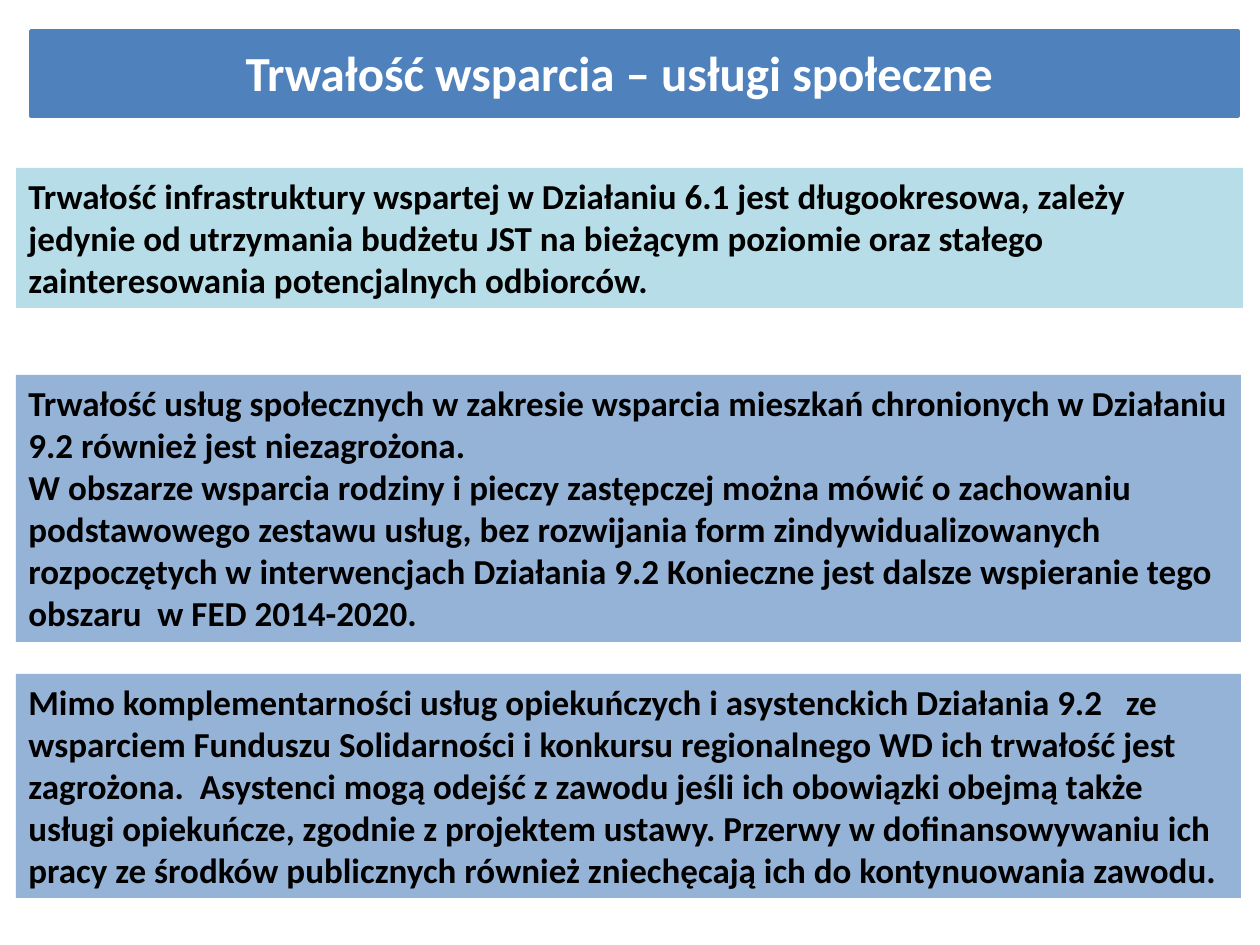
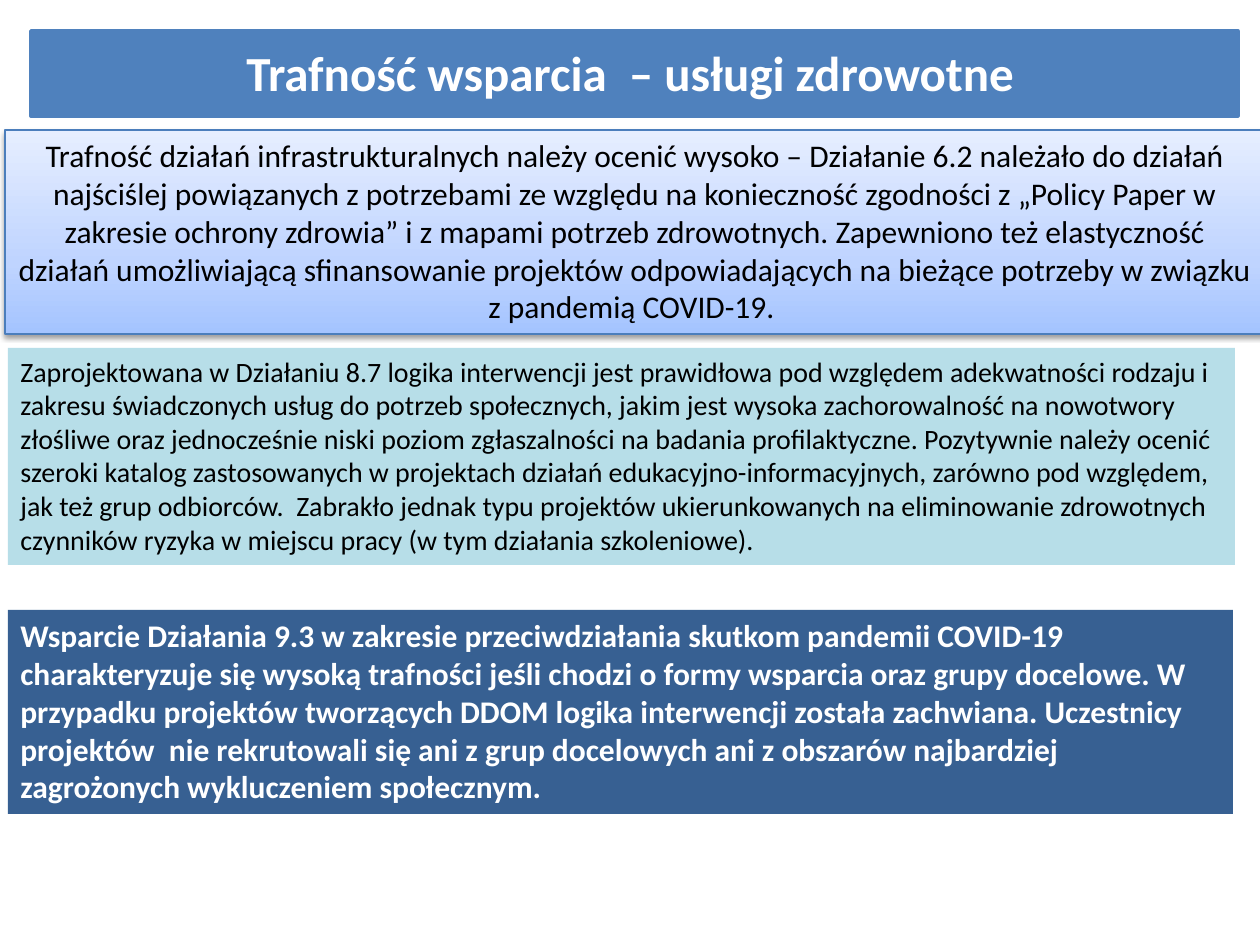
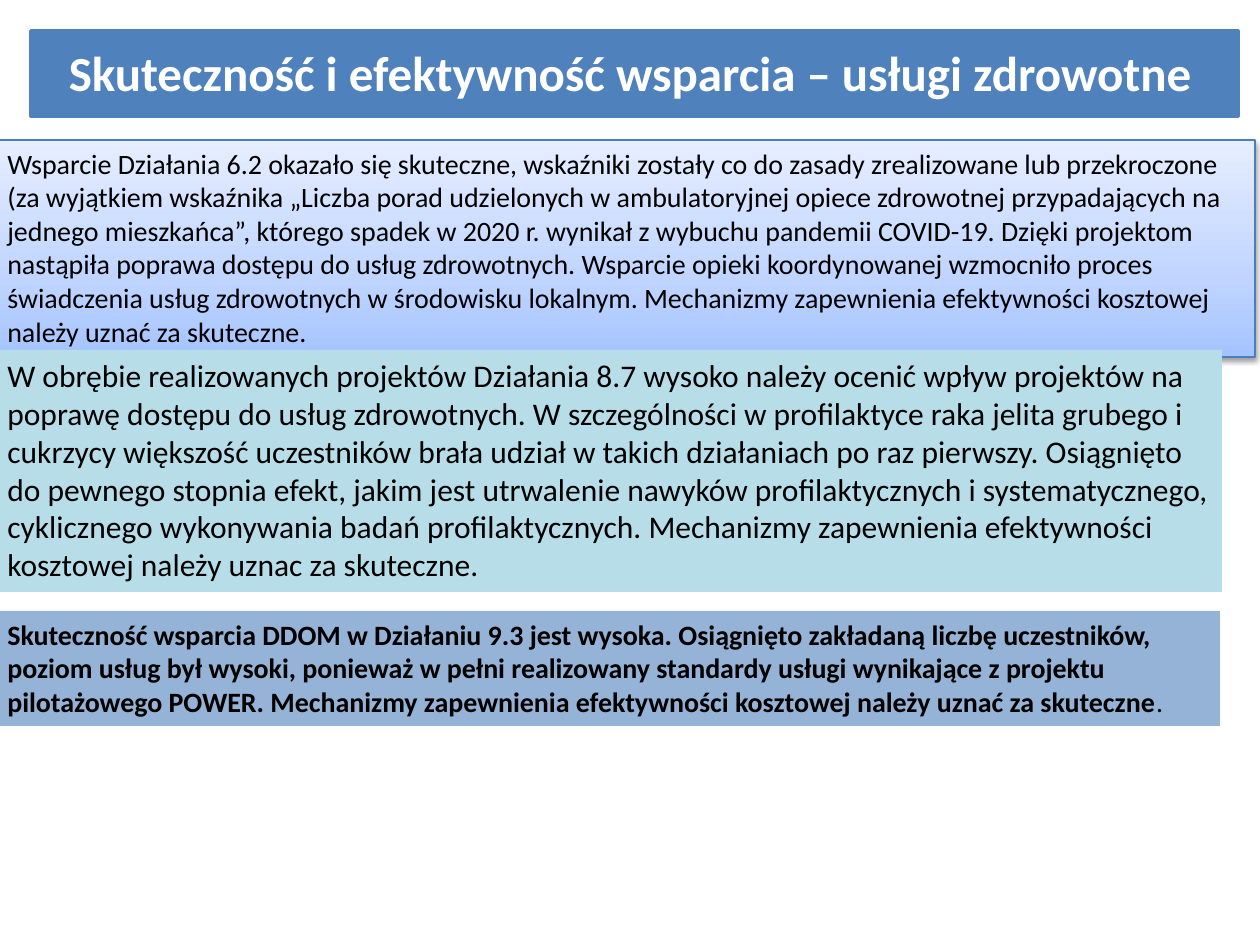
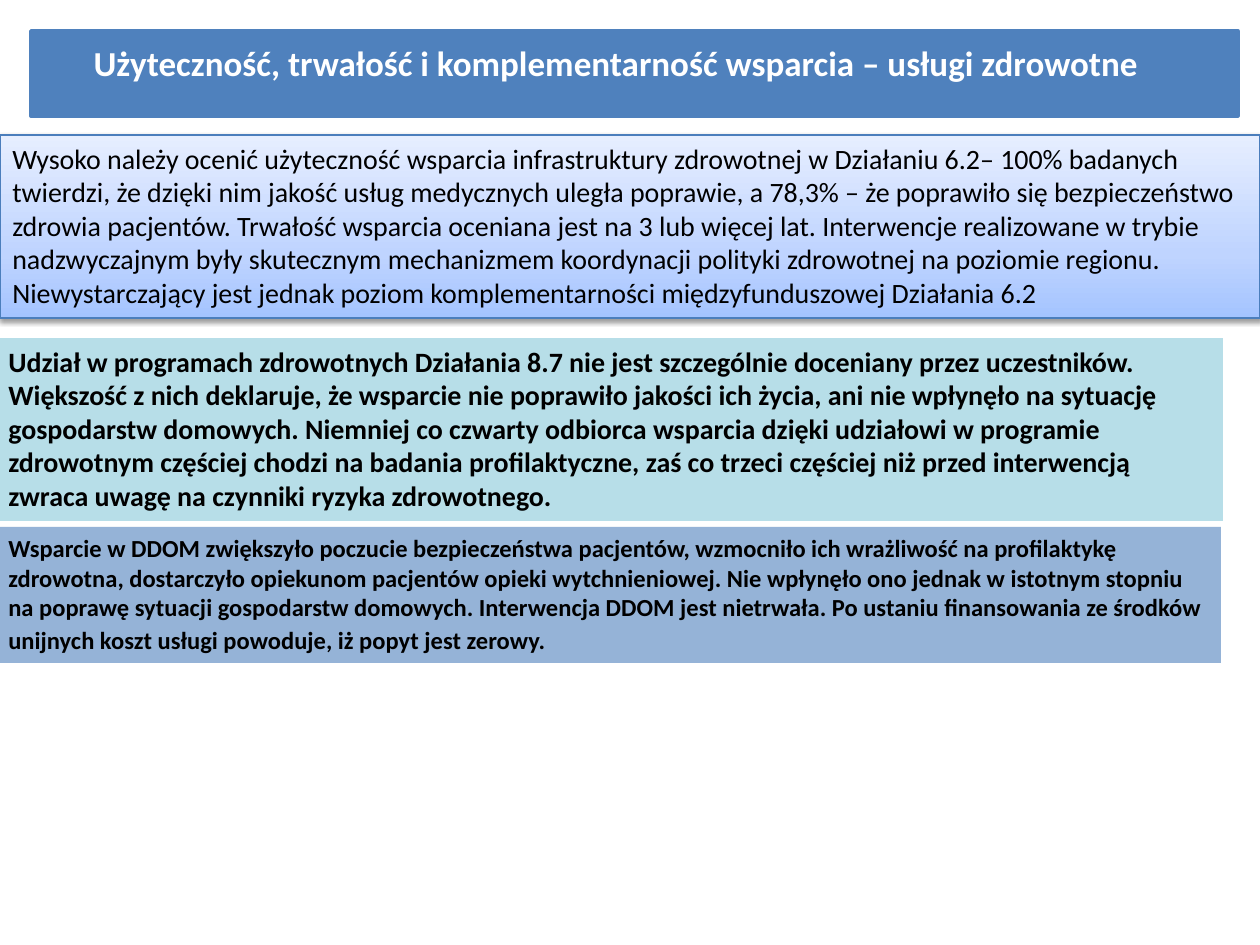
from collections import namedtuple

from lxml import etree
from pptx import Presentation
from pptx.dml.color import RGBColor
from pptx.enum.shapes import MSO_SHAPE
from pptx.enum.text import MSO_ANCHOR, MSO_AUTO_SIZE, PP_ALIGN
from pptx.oxml.ns import qn
from pptx.util import Emu, Pt

EMU_PER_PX = 914400 / 126
PAGE_WIDTH, PAGE_HEIGHT = 1260, 945
FONT = "Calibri"

RECTANGLE = MSO_SHAPE.RECTANGLE
TOP, MIDDLE = MSO_ANCHOR.TOP, MSO_ANCHOR.MIDDLE
LEFT, CENTER = PP_ALIGN.LEFT, PP_ALIGN.CENTER
GROW = MSO_AUTO_SIZE.SHAPE_TO_FIT_TEXT

BLACK = RGBColor(0x00, 0x00, 0x00)
WHITE = RGBColor(0xFF, 0xFF, 0xFF)
BAND_BLUE = RGBColor(0x4F, 0x81, 0xBD)
TEAL = RGBColor(0xB7, 0xDE, 0xE8)
LIGHT_BLUE = RGBColor(0x95, 0xB3, 0xD7)
DARK_BLUE = RGBColor(0x37, 0x60, 0x92)
OUTLINE_BLUE = RGBColor(0x4B, 0x7E, 0xBC)
GRADIENT_STOPS = (
    (0, RGBColor(0xA4, 0xC4, 0xFF)),
    (35, RGBColor(0xBF, 0xD4, 0xFF)),
    (100, RGBColor(0xE6, 0xEE, 0xFF)),
)

# A panel kind: its width, its fill (None means the gradient) and text colour
Kind = namedtuple("Kind", "width fill text_color")
INFRASTRUCTURE = Kind(PAGE_WIDTH, None, BLACK)
TEAL_PANEL = Kind(1227, TEAL, BLACK)
BLUE_PANEL = Kind(1225, LIGHT_BLUE, BLACK)
DARK_PANEL = Kind(1225, DARK_BLUE, WHITE)


def px(length):
    return Emu(round(length * EMU_PER_PX))


def add_rectangle(page, left, top, width, height):
    box = page.shapes.add_shape(RECTANGLE, px(left), px(top), px(width), px(height))
    box.shadow.inherit = False
    return box


def add_span(para, text, size, color, bold):
    span = para.add_run()
    span.text = text
    span.font.name = FONT
    span.font.size = Pt(size)
    span.font.color.rgb = color
    span.font.bold = bold


def write_text(box, *texts, size, color=BLACK, bold=False, align=LEFT, anchor=TOP):
    """Write one paragraph per text and return the last paragraph."""
    frame = box.text_frame
    frame.word_wrap = True
    frame.vertical_anchor = anchor
    for index, text in enumerate(texts):
        para = frame.add_paragraph() if index else frame.paragraphs[0]
        para.alignment = align
        add_span(para, text, size, color, bold)
    return para


def add_color(parent, color):
    return etree.SubElement(parent, qn("a:srgbClr"), val=str(color))


def fill_gradient(box):
    box.fill.gradient()
    box.fill.gradient_angle = 90
    stop_list = box.fill._xPr.find(".//" + qn("a:gsLst"))
    for stop in list(stop_list):
        stop_list.remove(stop)
    for percent, color in GRADIENT_STOPS:
        stop = etree.SubElement(stop_list, qn("a:gs"), pos=str(percent * 1000))
        add_color(stop, color)


def add_shadow(box):
    effects = box.element.spPr.find(qn("a:effectLst"))
    shadow = etree.SubElement(effects, qn("a:outerShdw"), blurRad="40000",
                              dist="20000", dir="5400000", rotWithShape="0")
    etree.SubElement(add_color(shadow, BLACK), qn("a:alpha"), val="38000")


def add_panel(page, kind, left, top, height, *texts, size, bold=False, align=LEFT):
    box = add_rectangle(page, left, top, kind.width, height)
    if kind.fill is None:
        fill_gradient(box)
        box.line.color.rgb = OUTLINE_BLUE
        box.line.width = Pt(0.75)
        add_shadow(box)
    else:
        box.fill.solid()
        box.fill.fore_color.rgb = kind.fill
        box.line.fill.background()
    box.text_frame.auto_size = GROW
    return write_text(box, *texts, size=size, color=kind.text_color, bold=bold, align=align)


def add_page(deck, title, left=0, top=38, width=PAGE_WIDTH, height=67, size=28):
    """Add a page with the title band shared by all pages."""
    page = deck.slides.add_slide(deck.slide_layouts[6])
    band = add_rectangle(page, 31, 31, 1207, 85)
    band.fill.solid()
    band.fill.fore_color.rgb = BAND_BLUE
    band.line.color.rgb = BAND_BLUE
    band.line.width = Pt(2)
    box = page.shapes.add_textbox(px(left), px(top), px(width), px(height))
    write_text(box, title, size=size, color=WHITE, bold=True, align=CENTER, anchor=MIDDLE)
    return page, box


def build_social_durability(deck):
    page, title_box = add_page(deck, "Trwałość wsparcia – usługi społeczne")
    title_box.text_frame.margin_right = px(34)
    add_panel(
        page, TEAL_PANEL, 16, 168, 140,
        "Trwałość infrastruktury wspartej w Działaniu 6.1 jest długookresowa, zależy "
        "jedynie od utrzymania budżetu JST na bieżącym poziomie oraz stałego "
        "zainteresowania potencjalnych odbiorców.",
        size=20, bold=True)
    add_panel(
        page, BLUE_PANEL, 16, 375, 267,
        "Trwałość usług społecznych w zakresie wsparcia mieszkań chronionych w Działaniu "
        "9.2 również jest niezagrożona.",
        "W obszarze wsparcia rodziny i pieczy zastępczej można mówić o zachowaniu "
        "podstawowego zestawu usług, bez rozwijania form zindywidualizowanych "
        "rozpoczętych w interwencjach Działania 9.2 Konieczne jest dalsze wspieranie tego "
        "obszaru  w FED 2014-2020.",
        size=20, bold=True)
    add_panel(
        page, BLUE_PANEL, 16, 674, 224,
        "Mimo komplementarności usług opiekuńczych i asystenckich Działania 9.2   ze "
        "wsparciem Funduszu Solidarności i konkursu regionalnego WD ich trwałość jest "
        "zagrożona.  Asystenci mogą odejść z zawodu jeśli ich obowiązki obejmą także "
        "usługi opiekuńcze, zgodnie z projektem ustawy. Przerwy w dofinansowywaniu ich "
        "pracy ze środków publicznych również zniechęcają ich do kontynuowania zawodu.",
        size=20, bold=True)


def build_health_relevance(deck):
    page, _ = add_page(deck, "Trafność wsparcia  – usługi zdrowotne", left=63, width=1134)
    add_panel(
        page, INFRASTRUCTURE, 5, 130, 204,
        "Trafność działań infrastrukturalnych należy ocenić wysoko – Działanie 6.2 "
        "należało do działań najściślej powiązanych z potrzebami ze względu na "
        "konieczność zgodności z „Policy Paper w zakresie ochrony zdrowia” i z mapami "
        "potrzeb zdrowotnych. Zapewniono też elastyczność działań umożliwiającą "
        "sfinansowanie projektów odpowiadających na bieżące potrzeby w związku z pandemią "
        "COVID-19. ",
        size=18, align=CENTER)
    add_panel(
        page, TEAL_PANEL, 8, 348, 217,
        "Zaprojektowana w Działaniu 8.7 logika interwencji jest prawidłowa pod względem "
        "adekwatności rodzaju i zakresu świadczonych usług do potrzeb społecznych, jakim "
        "jest wysoka zachorowalność na nowotwory złośliwe oraz jednocześnie niski poziom "
        "zgłaszalności na badania profilaktyczne. Pozytywnie należy ocenić szeroki "
        "katalog zastosowanych w projektach działań edukacyjno-informacyjnych, zarówno "
        "pod względem, jak też grup odbiorców.  Zabrakło jednak typu projektów "
        "ukierunkowanych na eliminowanie zdrowotnych czynników ryzyka w miejscu pracy "
        "(w tym działania szkoleniowe).",
        size=16)
    add_panel(
        page, DARK_PANEL, 8, 610, 204,
        "Wsparcie Działania 9.3 w zakresie przeciwdziałania skutkom pandemii COVID-19 "
        "charakteryzuje się wysoką trafności jeśli chodzi o formy wsparcia oraz grupy "
        "docelowe. W przypadku projektów tworzących DDOM logika interwencji została "
        "zachwiana. Uczestnicy projektów  nie rekrutowali się ani z grup docelowych ani z "
        "obszarów najbardziej zagrożonych wykluczeniem społecznym.",
        size=18, bold=True)


def build_health_effectiveness(deck):
    page, _ = add_page(deck, "Skuteczność i efektywność wsparcia – usługi zdrowotne")
    add_panel(
        page, INFRASTRUCTURE, -5, 140, 217,
        "Wsparcie Działania 6.2 okazało się skuteczne, wskaźniki zostały co do zasady "
        "zrealizowane lub przekroczone (za wyjątkiem wskaźnika „Liczba porad udzielonych "
        "w ambulatoryjnej opiece zdrowotnej przypadających na jednego mieszkańca”, "
        "którego spadek w 2020 r. wynikał z wybuchu pandemii COVID-19. Dzięki projektom "
        "nastąpiła poprawa dostępu do usług zdrowotnych. Wsparcie opieki koordynowanej "
        "wzmocniło proces świadczenia usług zdrowotnych w środowisku lokalnym. Mechanizmy "
        "zapewnienia efektywności kosztowej należy uznać za skuteczne.",
        size=16)
    add_panel(
        page, TEAL_PANEL, -5, 350, 242,
        "W obrębie realizowanych projektów Działania 8.7 wysoko należy ocenić wpływ "
        "projektów na poprawę dostępu do usług zdrowotnych. W szczególności w profilaktyce "
        "raka jelita grubego i cukrzycy większość uczestników brała udział w takich "
        "działaniach po raz pierwszy. Osiągnięto do pewnego stopnia efekt, jakim jest "
        "utrwalenie nawyków profilaktycznych i systematycznego, cyklicznego wykonywania "
        "badań profilaktycznych. Mechanizmy zapewnienia efektywności kosztowej należy "
        "uznac za skuteczne.",
        size=18)
    para = add_panel(
        page, BLUE_PANEL, -5, 611, 115,
        "Skuteczność wsparcia DDOM w Działaniu 9.3 jest wysoka. Osiągnięto zakładaną "
        "liczbę uczestników, poziom usług był wysoki, ponieważ w pełni realizowany "
        "standardy usługi wynikające z projektu pilotażowego POWER. Mechanizmy "
        "zapewnienia efektywności kosztowej należy uznać za skuteczne",
        size=16, bold=True)
    add_span(para, ".", 16, BLACK, False)


def build_health_usefulness(deck):
    page, _ = add_page(
        deck, "Użyteczność, trwałość i komplementarność wsparcia – usługi zdrowotne",
        left=35, top=18, width=1162, height=89, size=20)
    add_panel(
        page, INFRASTRUCTURE, 0, 135, 183,
        "Wysoko należy ocenić użyteczność wsparcia infrastruktury zdrowotnej w Działaniu "
        "6.2– 100% badanych twierdzi, że dzięki nim jakość usług medycznych uległa "
        "poprawie, a 78,3% – że poprawiło się bezpieczeństwo zdrowia pacjentów. Trwałość "
        "wsparcia oceniana jest na 3 lub więcej lat. Interwencje realizowane w trybie "
        "nadzwyczajnym były skutecznym mechanizmem koordynacji polityki zdrowotnej na "
        "poziomie regionu. Niewystarczający jest jednak poziom komplementarności "
        "międzyfunduszowej Działania 6.2",
        size=16)
    add_panel(
        page, TEAL_PANEL, -4, 338, 183,
        "Udział w programach zdrowotnych Działania 8.7 nie jest szczególnie doceniany "
        "przez uczestników. Większość z nich deklaruje, że wsparcie nie poprawiło jakości "
        "ich życia, ani nie wpłynęło na sytuację gospodarstw domowych. Niemniej co czwarty "
        "odbiorca wsparcia dzięki udziałowi w programie zdrowotnym częściej chodzi na "
        "badania profilaktyczne, zaś co trzeci częściej niż przed interwencją  zwraca "
        "uwagę na czynniki ryzyka zdrowotnego.",
        size=16, bold=True)
    para = add_panel(
        page, BLUE_PANEL, -4, 527, 136,
        "Wsparcie w DDOM zwiększyło poczucie bezpieczeństwa pacjentów, wzmocniło ich "
        "wrażliwość na profilaktykę zdrowotna, dostarczyło opiekunom pacjentów opieki "
        "wytchnieniowej. Nie wpłynęło ono jednak w istotnym stopniu na poprawę sytuacji "
        "gospodarstw domowych. Interwencja DDOM jest nietrwała. Po ustaniu finansowania "
        "ze środków unijnych koszt usługi powoduje, iż popyt jest zerowy.",
        size=14, bold=True)
    # The larger closing space sets the height of the last line
    add_span(para, " ", 16, BLACK, False)


def main():
    deck = Presentation()
    deck.slide_width, deck.slide_height = px(PAGE_WIDTH), px(PAGE_HEIGHT)
    build_social_durability(deck)
    build_health_relevance(deck)
    build_health_effectiveness(deck)
    build_health_usefulness(deck)
    deck.save("out.pptx")


if __name__ == "__main__":
    main()
